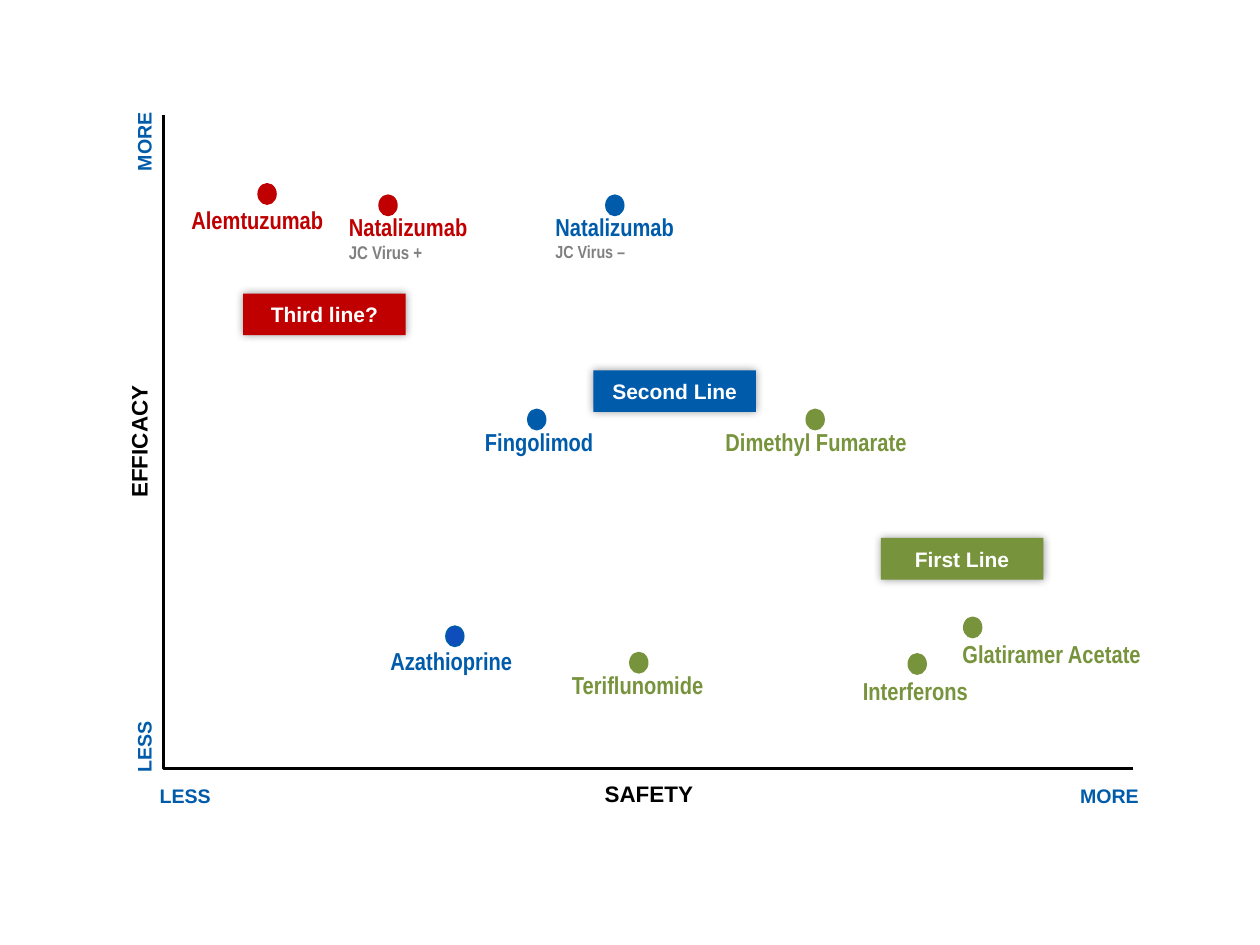
from lxml.etree import SubElement
from pptx import Presentation
from pptx.dml.color import RGBColor
from pptx.enum.shapes import MSO_SHAPE
from pptx.enum.text import MSO_ANCHOR, MSO_AUTO_SIZE, PP_ALIGN
from pptx.oxml.ns import qn
from pptx.util import Inches, Pt

COLORS = {
    "black": "000000",
    "white": "FFFFFF",
    "red": "C00000",
    "blue": "005CAB",
    "bright_blue": "0F4DBC",
    "green": "77933C",
    "gray": "808080",
}
COLUMNS, ROWS = 100, 75

AXIS_LABELS = [
    ("efficacy", 16, "black", (5, 33.1, 11.9, 3.9), 270),
    ("safety", 16, "black", (46.7, 61, 9.6, 4), 0),
    ("more", 14, "blue", (7.7, 9.5, 7.3, 3.5), 270),
    ("less", 14, "blue", (8, 57.5, 6.7, 3.5), 270),
    ("less", 14, "blue", (11.5, 61.3, 6.4, 3.6), 0),
    ("more", 14, "blue", (84.5, 61.3, 7.1, 3.6), 0),
]

DRUGS = [
    ("Alemtuzumab", "red", (20.5, 14.6), (14.2, 15.8, 13.2, 3.6)),
    ("Natalizumab", "red", (30.1, 15.5), (26.7, 16.3, 12.1, 5.6), "JC Virus +", 10.5),
    ("Natalizumab", "blue", (48.1, 15.5), (43.1, 16.3, 12.1, 5.5), "JC Virus –", 10),
    ("Fingolimod", "blue", (41.9, 32.5), (37.5, 33.4, 11.2, 3.6)),
    ("Dimethyl Fumarate", "green", (64, 32.5), (56.6, 33.4, 17.4, 3.6)),
    ("Teriflunomide", "green", (50, 51.8), (44.4, 52.7, 13.2, 3.6)),
    ("Interferons", "green", (72.1, 51.9), (67.5, 53.2, 11, 3.6)),
    ("Glatiramer Acetate", "green", (76.5, 49), (75.4, 50.2, 17.1, 3.6)),
    ("Azathioprine", "blue", (35.4, 49.7), (30, 50.8, 12.4, 3.6)),
]
DOT_FILLS = {"Azathioprine": "bright_blue"}

TREATMENT_LINES = [
    ("Third line?", "red", (19.3, 23.3)),
    ("Second Line", "blue", (47.1, 29.4)),
    ("First Line", "green", (69.9, 42.7)),
]


class DrugMap:
    label_font = "Arial"
    drug_font = "Arial Narrow"
    dot_size = (1.4, 1.6)
    badge_size = (12.9, 3.3)

    def __init__(self, deck):
        self.cell_width = deck.slide_width / COLUMNS
        self.cell_height = deck.slide_height / ROWS
        self.slide = deck.slides.add_slide(deck.slide_layouts[6])

    def place(self, column, row):
        return round(column * self.cell_width), round(row * self.cell_height)

    def box(self, column, row, width, height):
        return *self.place(column, row), *self.place(width, height)

    def color(self, name):
        return RGBColor.from_string(COLORS[name])

    def style(self, font, size, color, family=None):
        font.size = Pt(size)
        font.bold = True
        font.color.rgb = self.color(color)
        if family:
            font.name = family

    def axes(self, top, corner, end):
        outline = self.slide.shapes.build_freeform(*self.place(*top))
        outline.add_line_segments([self.place(*corner), self.place(*end)], close=False)
        frame = outline.convert_to_shape()
        frame.fill.background()
        frame.line.color.rgb = self.color("black")
        frame.line.width = Pt(1.5)
        frame.shadow.inherit = False

    def text(self, area):
        holder = self.slide.shapes.add_textbox(*self.box(*area))
        holder.text_frame.word_wrap = False
        holder.text_frame.auto_size = MSO_AUTO_SIZE.SHAPE_TO_FIT_TEXT
        return holder, holder.text_frame.paragraphs[0]

    def axis_label(self, wording, size, color, area, rotation):
        holder, paragraph = self.text(area)
        holder.rotation = rotation
        paragraph.alignment = PP_ALIGN.CENTER
        self.style(paragraph.font, size, color, self.label_font)
        run = paragraph.add_run()
        run.text = wording
        run._r.get_or_add_rPr().set("cap", "small")

    def shape(self, kind, position, size, fill):
        figure = self.slide.shapes.add_shape(kind, *self.box(*position, *size))
        figure.shadow.inherit = False
        figure.fill.solid()
        figure.fill.fore_color.rgb = self.color(fill)
        return figure

    def drug(self, name, color, dot_at, area, note=None, note_size=None):
        fill = DOT_FILLS.get(name, color)
        dot = self.shape(MSO_SHAPE.OVAL, dot_at, self.dot_size, fill)
        dot.line.color.rgb = self.color(color)
        dot.line.width = Pt(1)
        _, paragraph = self.text(area)
        self.style(paragraph.font, 14, color, self.drug_font)
        paragraph.add_run().text = name
        if note:
            paragraph.add_line_break()
            remark = paragraph.add_run()
            remark.text = note
            self.style(remark.font, note_size, "gray")

    def badge(self, wording, color, position):
        panel = self.shape(MSO_SHAPE.RECTANGLE, position, self.badge_size, color)
        panel.line.fill.background()
        self.glow(panel)
        frame = panel.text_frame
        frame.word_wrap = False
        frame.vertical_anchor = MSO_ANCHOR.MIDDLE
        paragraph = frame.paragraphs[0]
        paragraph.alignment = PP_ALIGN.CENTER
        self.style(paragraph.font, 12, "white", self.label_font)
        paragraph.add_run().text = wording

    def glow(self, panel):
        effects = panel._element.spPr.find(qn("a:effectLst"))
        shadow = SubElement(effects, qn("a:outerShdw"), blurRad=str(Pt(5)), dist="0", dir="0")
        tint = SubElement(shadow, qn("a:srgbClr"), val=COLORS["black"])
        SubElement(tint, qn("a:alpha"), val="40000")


def main():
    deck = Presentation()
    deck.slide_width, deck.slide_height = Inches(10), Inches(7.5)
    drug_map = DrugMap(deck)
    drug_map.axes((13, 9.1), (13, 61), (89.9, 61))
    for label in AXIS_LABELS:
        drug_map.axis_label(*label)
    for drug in DRUGS:
        drug_map.drug(*drug)
    for treatment_line in TREATMENT_LINES:
        drug_map.badge(*treatment_line)
    deck.save("out.pptx")


if __name__ == "__main__":
    main()
